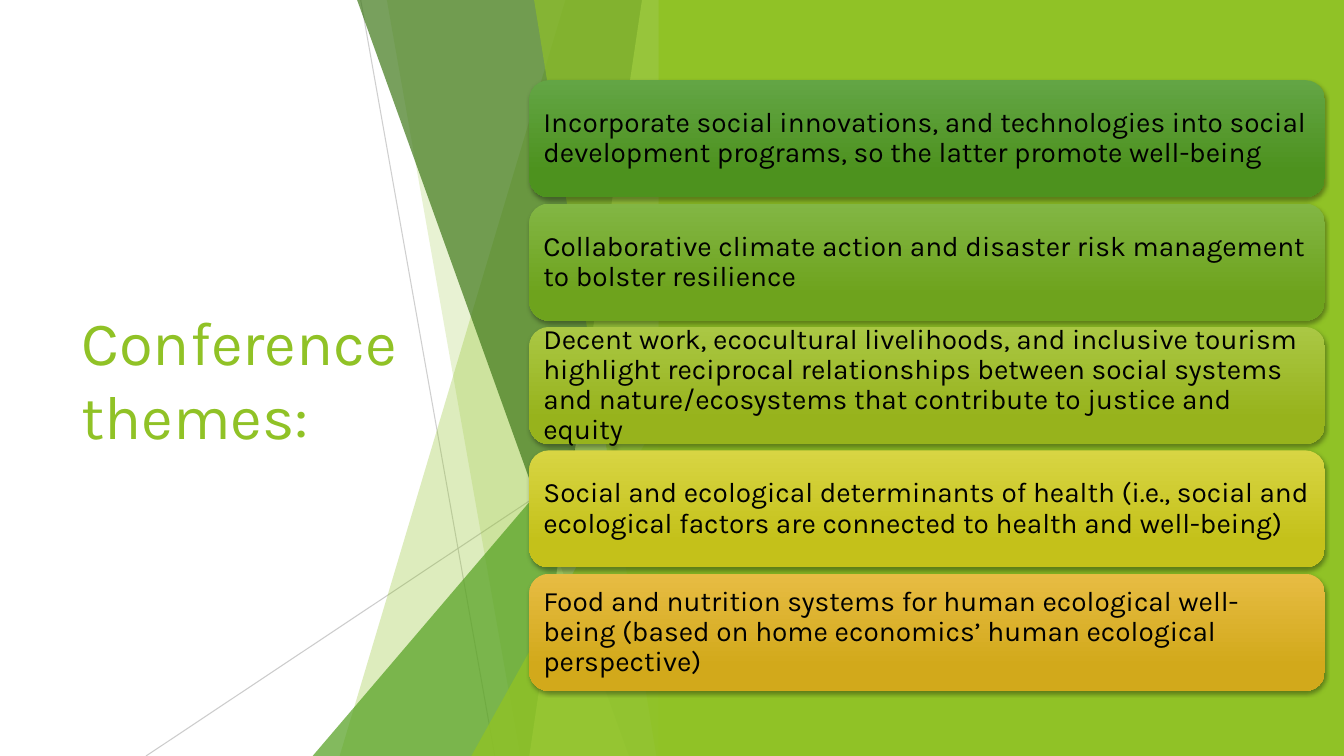
import pptx
import pptx.util
import pptx.dml.color
import pptx.enum.shapes
import pptx.enum.text
import pptx.oxml
import pptx.oxml.ns

Cm = pptx.util.Cm
Pt = pptx.util.Pt
SHAPES = pptx.enum.shapes.MSO_SHAPE

COLORS = {
    "lime": "90C226",
    "green": "54A021",
    "forest": "3F7819",
    "pale": "C0E474",
    "rule": "BFBFBF",
    "text": "000000",
}
WIDTH, HEIGHT = 33.87, 19.05
FACET_RIGHT = 16.92

# band: x at the top, x at the bottom; corner: left, top; then colour and opacity
FACETS = [
    ("band", 14.25, 8.56, "lime", 30),
    ("band", 9.75, 13.11, "lime", 20),
    ("corner", 7.88, 8.46, "green", 72),
    ("band", 9, 15.85, "forest", 70),
    ("band", 16.18, 13.34, "pale", 70),
    ("band", 13.46, 16.54, "lime", 65),
    ("corner", 11.88, 9.98, "lime", 80),
]

THEMES = [
    ("63A545", "4D921E", "Incorporate social innovations, and technologies into social "
     "development programs, so the latter promote well-being"),
    ("82B644", "6EA31D", "Collaborative climate action and disaster risk management "
     "to bolster resilience"),
    ("AAC744", "97B31C", "Decent work, ecocultural livelihoods, and inclusive tourism "
     "highlight reciprocal relationships between social systems and "
     "nature/ecosystems that contribute to justice and equity"),
    ("D8D543", "C4C11A", "Social and ecological determinants of health (i.e., social and "
     "ecological factors are connected to health and well-being)"),
    ("E7BC43", "D2A91B", "Food and nutrition systems for human ecological well-being "
     "(based on home economics’ human ecological perspective)"),
]
CARD_LEFT, CARD_TOP, CARD_WIDTH, CARD_HEIGHT, CARD_PITCH = 13.34, 2.02, 20.05, 2.95, 3.11


def rgb(value):
    return pptx.dml.color.RGBColor.from_string(value)


def add_xml(parent, xml):
    declaration = pptx.oxml.ns.nsdecls("a")
    parent.append(pptx.oxml.parse_xml(xml.replace(" ", f" {declaration} ", 1)))


def set_opacity(fill_owner, percent):
    for color in fill_owner.iter(pptx.oxml.ns.qn("a:srgbClr")):
        add_xml(color, f'<a:alpha val="{percent * 1000}"/>')


def write(frame, text, size, color, spacing=1.0, inset=None):
    """Fill a text frame with one left-aligned, vertically centred paragraph."""
    frame.word_wrap = True
    frame.auto_size = pptx.enum.text.MSO_AUTO_SIZE.NONE
    frame.vertical_anchor = pptx.enum.text.MSO_ANCHOR.MIDDLE
    if inset is not None:
        frame.margin_left = frame.margin_right = Cm(inset)
        frame.margin_top = frame.margin_bottom = Cm(inset)
    paragraph = frame.paragraphs[0]
    paragraph.alignment = pptx.enum.text.PP_ALIGN.LEFT
    paragraph.line_spacing = spacing
    run = paragraph.add_run()
    run.text = text
    run.font.name = "Karla"
    run.font.size = Pt(size)
    run.font.color.rgb = rgb(COLORS[color])


class ThemeSlide:
    def __init__(self, deck):
        self.slide = deck.slides.add_slide(deck.slide_layouts[5])
        self.shapes = self.slide.shapes

    def title(self, text):
        heading = self.shapes.title
        heading.left, heading.top = Cm(1.8), Cm(3.84)
        heading.width, heading.height = Cm(9.86), Cm(11.38)
        write(heading.text_frame, text, size=44, color="lime")

    def paint(self, shape, color, opacity=100):
        shape.shadow.inherit = False
        shape.fill.solid()
        shape.fill.fore_color.rgb = rgb(COLORS[color])
        shape.line.fill.background()
        if opacity < 100:
            set_opacity(shape.fill._xPr, opacity)

    def rule(self, x1, y1, x2, y2, opacity):
        rule = self.shapes.add_connector(
            pptx.enum.shapes.MSO_CONNECTOR.STRAIGHT, Cm(x1), Cm(y1), Cm(x2), Cm(y2))
        rule.line.color.rgb = rgb(COLORS["rule"])
        rule.line.width = Pt(0.75)
        set_opacity(rule.line._ln, opacity)
        add_xml(rule._element.spPr, "<a:effectLst />")

    def band(self, top_x, bottom_x, color, opacity):
        """Full-height facet with a slanted left edge."""
        outline = self.shapes.build_freeform(Cm(top_x), Cm(0))
        outline.add_line_segments([
            (Cm(FACET_RIGHT), Cm(0)),
            (Cm(FACET_RIGHT), Cm(HEIGHT)),
            (Cm(bottom_x), Cm(HEIGHT)),
        ])
        self.paint(outline.convert_to_shape(), color, opacity)

    def corner(self, left, top, color, opacity):
        """Right-angled facet that rises to the right from the bottom edge."""
        corner = self.shapes.add_shape(
            SHAPES.ISOSCELES_TRIANGLE, Cm(left), Cm(top),
            Cm(FACET_RIGHT - left), Cm(HEIGHT - top))
        corner.adjustments[0] = 1
        self.paint(corner, color, opacity)

    def panel(self, left, color):
        panel = self.shapes.add_shape(
            SHAPES.RECTANGLE, Cm(left), Cm(0), Cm(WIDTH - left), Cm(HEIGHT))
        self.paint(panel, color)

    def card(self, top, light, dark, text):
        card = self.shapes.add_shape(
            SHAPES.ROUNDED_RECTANGLE, Cm(CARD_LEFT), Cm(top), Cm(CARD_WIDTH), Cm(CARD_HEIGHT))
        card.line.fill.background()
        card.fill.gradient()
        card.fill.gradient_angle = 270
        for stop, color, position in zip(card.fill.gradient_stops, (light, dark), (0, 0.78)):
            stop.color.rgb = rgb(color)
            stop.position = position
        card.shadow.inherit = False
        effects = card._element.spPr.find(pptx.oxml.ns.qn("a:effectLst"))
        add_xml(effects, f'<a:outerShdw blurRad="{Pt(3)}" dist="{Pt(2)}" dir="5400000" '
                         'rotWithShape="0"><a:srgbClr val="000000"><a:alpha val="35000"/>'
                         '</a:srgbClr></a:outerShdw>')
        write(card.text_frame, text, size=20, color="text", spacing=0.9, inset=0.21)


def main():
    deck = pptx.Presentation()
    deck.slide_width, deck.slide_height = Cm(WIDTH), Cm(HEIGHT)
    page = ThemeSlide(deck)
    page.title("Conference themes:")
    page.rule(9.09, 0, 12.47, HEIGHT, opacity=75)
    page.rule(FACET_RIGHT, 10.24, 3.68, HEIGHT, opacity=80)
    for kind, first, second, color, opacity in FACETS:
        draw = page.band if kind == "band" else page.corner
        draw(first, second, color, opacity)
    page.panel(16.6, "lime")
    for row, (light, dark, text) in enumerate(THEMES):
        page.card(CARD_TOP + row * CARD_PITCH, light, dark, text)
    deck.save("out.pptx")


if __name__ == "__main__":
    main()
